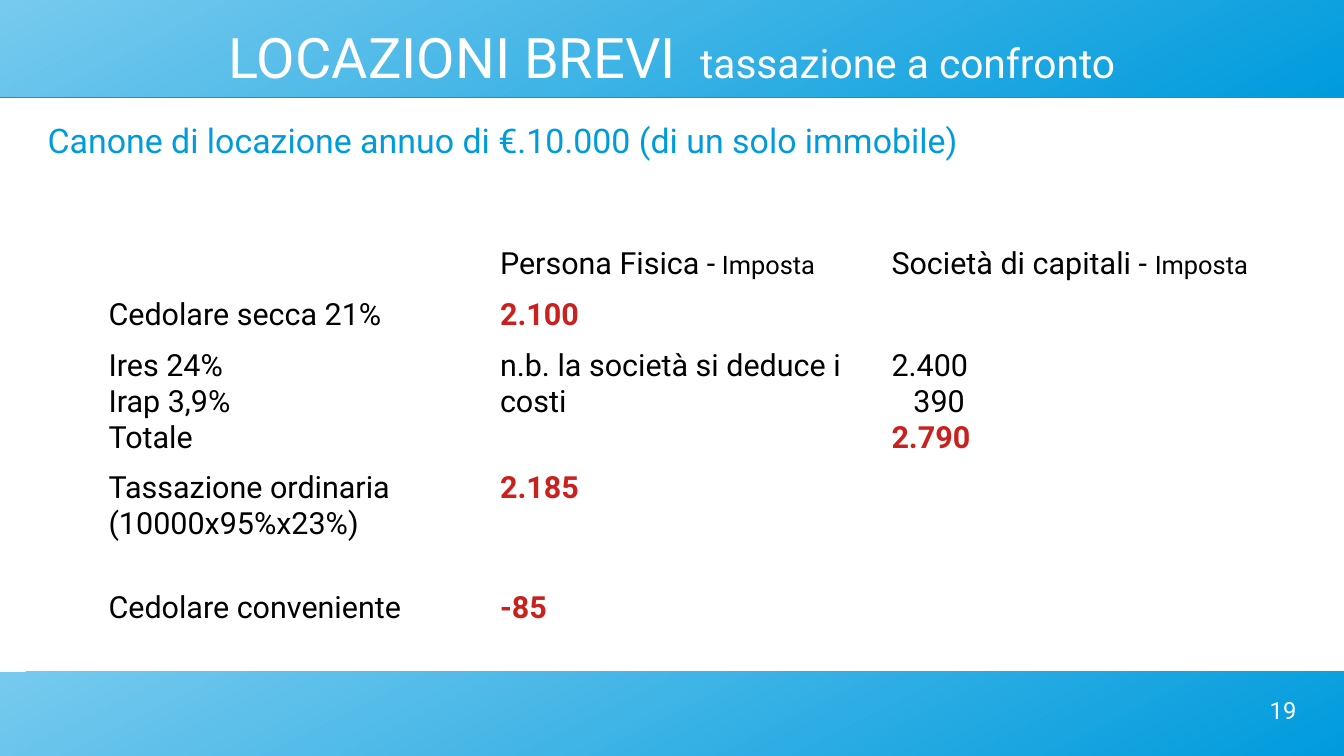
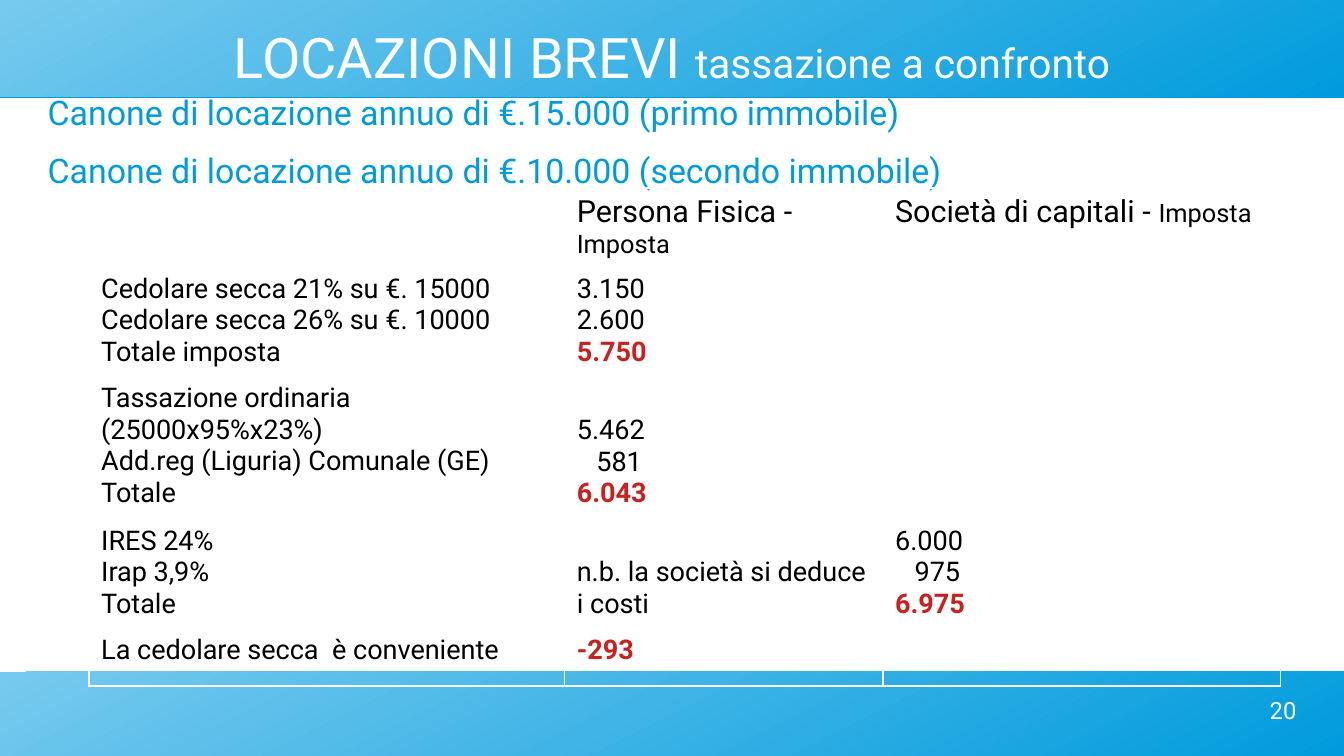
from dataclasses import dataclass
from typing import Any

from lxml.etree import SubElement
from pptx import Presentation
from pptx.dml.color import RGBColor
from pptx.enum.shapes import MSO_SHAPE as Preset
from pptx.enum.text import MSO_ANCHOR as Anchor, PP_ALIGN as Align
from pptx.oxml.ns import qn
from pptx.util import Emu, Inches, Pt

COLORS = {"light": "77CAEE", "blue": "009BDD", "white": "FFFFFF",
          "black": "000000", "red": "C9211E"}
FONT = "Roboto"
WIDTH, HEIGHT = 11.02, 6.2
MARGIN = 0.39
CONTENT_WIDTH = 10.24
LINE_HEIGHT = 1.172 / 72  # inches of line per point of text
NO_INSETS = {"margin_left": 0, "margin_top": 0, "margin_right": 0,
             "margin_bottom": 0, "word_wrap": True}


@dataclass(frozen=True)
class Run:
    text: str
    size: float
    color: str = "black"
    bold: bool = False


@dataclass(frozen=True)
class Line:
    runs: tuple[Run, ...]
    indent: float = 0


@dataclass(frozen=True)
class Cell:
    lines: tuple[Line, ...] = ()
    lines_down: int = 0  # lines left free above the text


@dataclass(frozen=True)
class Comparison:
    number: int
    title_gap: str
    rents: tuple[str, ...]
    rents_top: float
    left: float
    top: float
    columns: tuple[float, ...]
    rows: tuple[float, ...]
    cells: tuple[tuple[Cell, ...], ...]


def set_all(target: Any, values: dict[str, Any]) -> None:
    for attribute, value in values.items():
        setattr(target, attribute, value)


def rgb(name: str) -> RGBColor:
    return RGBColor.from_string(COLORS[name])


# Cell contents
def plain(size: float, *texts: str, down: int = 0) -> Cell:
    return Cell(tuple(Line((Run(text, size),)) for text in texts), down)


def result(size: float, text: str) -> Cell:
    return Cell((Line((Run(text, size, "red", True),)),))


def total(size: float, first: str, second: str, amount: str, down: int = 0) -> Cell:
    """Two amounts, the shorter one indented, above their sum in red."""
    indent = 0.01 * size if len(second) < len(first) else 0
    return Cell((Line((Run(first, size),)), Line((Run(second, size),), indent),
                 *result(size, amount).lines), down)


EMPTY = Cell()
HEADER = (EMPTY,
          Cell((Line((Run("Persona Fisica -", 18), Run(" Imposta", 15))),)),
          Cell((Line((Run("Società di capitali - ", 18), Run("Imposta", 15))),)))
COSTS_NOTE = "n.b. la società si deduce i costi"

COMPARISONS = (
    Comparison(
        19, " ", ("Canone di locazione annuo di €.10.000 (di un solo immobile)",), 0.98,
        0.79, 1.97, (3.21, 3.21, 3.22), (0.42, 0.42, 0.98, 0.98, 0.43),
        (HEADER,
         (plain(18, "Cedolare secca 21%"), result(18, "2.100"), EMPTY),
         (plain(18, "Ires 24%", "Irap 3,9%", "Totale"), plain(18, COSTS_NOTE),
          total(18, "2.400", "390", "2.790")),
         (plain(18, "Tassazione ordinaria", "(10000x95%x23%)"),
          result(18, "2.185"), EMPTY),
         (plain(18, "Cedolare conveniente"), result(18, "-85"), EMPTY))),
    Comparison(
        20, "", ("Canone di locazione annuo di €.15.000 (primo immobile)",
                 "Canone di locazione annuo di €.10.000 (secondo immobile)"), 0.75,
        0.73, 1.54, (3.9, 2.61, 3.26), (0.63, 0.9, 1.13, 0.88, 0.47),
        (HEADER,
         (plain(16, "Cedolare secca 21% su €. 15000", "Cedolare secca 26% su €. 10000",
                "Totale imposta"),
          total(16, "3.150", "2.600", "5.750"), EMPTY),
         (plain(16, "Tassazione ordinaria", "(25000x95%x23%)",
                "Add.reg (Liguria) Comunale (GE)", "Totale"),
          total(16, "5.462", "581", "6.043", down=1), EMPTY),
         (plain(16, "IRES 24%", "Irap 3,9%", "Totale"), plain(16, COSTS_NOTE, down=1),
          total(16, "6.000", "975", "6.975")),
         (plain(16, "La cedolare secca  è conveniente"), result(16, "-293"), EMPTY))),
)


def write(frame: Any, lines: tuple[Line, ...], **paragraph_format: Any) -> None:
    for index, line in enumerate(lines):
        paragraph = frame.paragraphs[0] if index == 0 else frame.add_paragraph()
        set_all(paragraph, paragraph_format)
        if line.indent:
            paragraph._p.get_or_add_pPr().set("marL", str(Inches(line.indent)))
        for part in line.runs:
            run = paragraph.add_run()
            run.text = part.text
            set_all(run.font, {"name": FONT, "size": Pt(part.size), "bold": part.bold})
            run.font.color.rgb = rgb(part.color)


def add_text(slide: Any, left: float, top: float, width: float, height: float,
             lines: tuple[Line, ...], anchor: Any = Anchor.TOP, **paragraph_format: Any) -> None:
    box = slide.shapes.add_textbox(*map(Inches, (left, top, width, height)))
    set_all(box.text_frame, {**NO_INSETS, "vertical_anchor": anchor})
    write(box.text_frame, lines, **paragraph_format)


def add_band(slide: Any, top: float, height: float) -> None:
    band = slide.shapes.add_shape(Preset.RECTANGLE, 0, Inches(top),
                                  Inches(WIDTH), Inches(height))
    band.line.fill.background()
    band.fill.gradient()
    band.fill.gradient_angle = 360 - 63
    for stop, name in zip(band.fill.gradient_stops, ("light", "blue")):
        stop.color.rgb = rgb(name)
    # Thin blue edge under the band
    band.shadow.inherit = False
    effects = band._element.spPr.find(qn("a:effectLst"))
    edge = SubElement(effects, qn("a:outerShdw"), dist=str(Pt(0.9)),
                      dir=str(90 * 60000), rotWithShape="0")
    SubElement(edge, qn("a:srgbClr"), val=COLORS["blue"])


def add_frame(slide: Any, comparison: Comparison) -> None:
    """Bands, page number and title, shared by the slides."""
    add_band(slide, 0, 0.79)
    add_band(slide, 5.51, 0.69)
    add_text(slide, 8.07, 5.71, 2.56, 0.39,
             (Line((Run(str(comparison.number), 14, "white"),)),), alignment=Align.RIGHT)
    title = (Run("LOCAZIONI BREVI ", 33, "white"),
             Run(comparison.title_gap + "tassazione a confronto", 24, "white"))
    add_text(slide, MARGIN, 0.2, CONTENT_WIDTH, 0.52, (Line(title),),
             Anchor.MIDDLE, alignment=Align.CENTER)


def add_taxes(slide: Any, comparison: Comparison) -> None:
    taxes = slide.shapes.add_table(
        len(comparison.rows), len(comparison.columns),
        Inches(comparison.left), Inches(comparison.top),
        Inches(sum(comparison.columns)), Inches(sum(comparison.rows))).table
    set_all(taxes, {"first_row": False, "horz_banding": False})
    for column, width in zip(taxes.columns, comparison.columns):
        column.width = Inches(width)
    for row, height, contents in zip(taxes.rows, comparison.rows, comparison.cells):
        row.height = Inches(height)
        for cell, content in zip(row.cells, contents):
            cell.fill.background()
            if content.lines_down:
                size = content.lines[0].runs[0].size
                cell.margin_top = Emu(Inches(
                    0.05 + content.lines_down * size * LINE_HEIGHT))
            write(cell.text_frame, content.lines)


def main() -> None:
    deck = Presentation()
    set_all(deck, {"slide_width": Inches(WIDTH), "slide_height": Inches(HEIGHT)})
    for comparison in COMPARISONS:
        slide = deck.slides.add_slide(deck.slide_layouts[6])
        add_frame(slide, comparison)
        rents = tuple(Line((Run(rent, 20, "blue"),)) for rent in comparison.rents)
        add_text(slide, MARGIN, comparison.rents_top, CONTENT_WIDTH,
                 0.5 * len(rents), rents, space_before=Pt(10.6))
        add_taxes(slide, comparison)
    deck.save("out.pptx")


if __name__ == "__main__":
    main()
